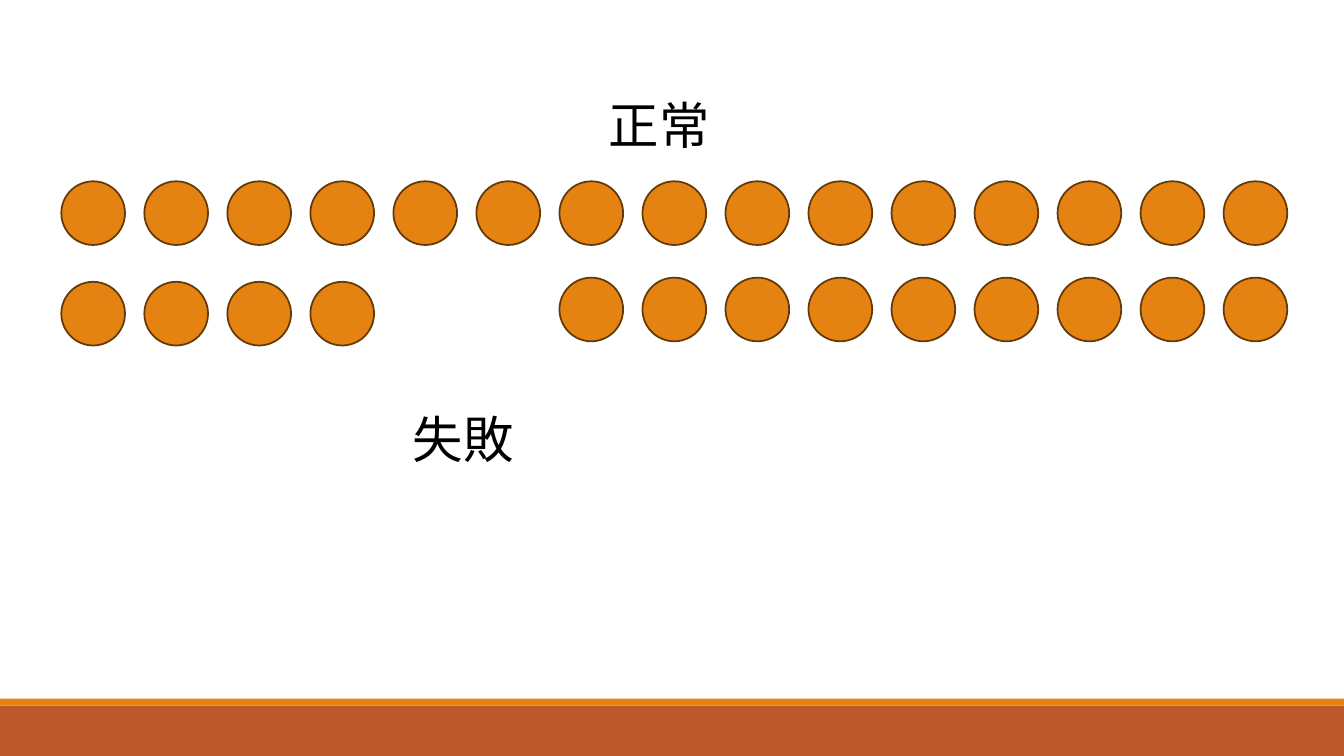
import pptx
import pptx.util
import pptx.dml.color
import pptx.enum.shapes
import pptx.enum.text
import pptx.oxml
import pptx.oxml.ns

Pt = pptx.util.Pt
SHAPES = pptx.enum.shapes.MSO_SHAPE
SLIDE_WIDTH, SLIDE_HEIGHT = 960, 540
FONT = "Noto Sans CJK SC"
COLORS = {
    "band": "BD582C",
    "accent": "E48312",
    "outline": "643908",
    "text": "000000",
}
DOT_SIZE = 45.5
DOT_PITCH = 59.3
DOTS_LEFT = 43.8


def rgb(name):
    return pptx.dml.color.RGBColor.from_string(COLORS[name])


def add_filled(slide, kind, left, top, width, height, color):
    shape = slide.shapes.add_shape(kind, Pt(left), Pt(top), Pt(width), Pt(height))
    shape.shadow.inherit = False
    shape.fill.solid()
    shape.fill.fore_color.rgb = rgb(color)
    shape.line.fill.background()
    return shape


def add_footer(slide, top, width, height, stripe_height):
    """Draw the bottom band with a thin stripe resting on it."""
    add_filled(slide, SHAPES.RECTANGLE, 0, top, width, height, "band")
    add_filled(slide, SHAPES.RECTANGLE, 0, top - stripe_height, width, stripe_height, "accent")


def add_dots(slide, left, top, columns):
    """Draw a row of dots in the given columns of the grid."""
    for column in columns:
        dot = add_filled(slide, SHAPES.OVAL, left + column * DOT_PITCH, top,
                         DOT_SIZE, DOT_SIZE, "accent")
        dot.line.color.rgb = rgb("outline")
        dot.line.width = Pt(1.25)


def add_label(slide, text, left, top, width, height):
    label = slide.shapes.add_textbox(Pt(left), Pt(top), Pt(width), Pt(height))
    frame = label.text_frame
    frame.word_wrap = True
    frame.auto_size = pptx.enum.text.MSO_AUTO_SIZE.SHAPE_TO_FIT_TEXT
    frame.text = text
    paragraph = frame.paragraphs[0]
    paragraph.alignment = pptx.enum.text.PP_ALIGN.CENTER
    font = paragraph.runs[0].font
    font.size = Pt(36)
    font.color.rgb = rgb("text")
    font.name = FONT
    east_asian = pptx.oxml.parse_xml(
        f'<a:ea {pptx.oxml.ns.nsdecls("a")} typeface="{FONT}"/>')
    paragraph.runs[0].font._element.find(pptx.oxml.ns.qn("a:latin")).addnext(east_asian)


def main():
    presentation = pptx.Presentation()
    presentation.slide_width = Pt(SLIDE_WIDTH)
    presentation.slide_height = Pt(SLIDE_HEIGHT)
    slide = presentation.slides.add_slide(presentation.slide_layouts[6])

    add_footer(slide, 504, SLIDE_WIDTH, 36, 5)
    add_dots(slide, DOTS_LEFT, 129.5, range(15))
    add_dots(slide, DOTS_LEFT, 201.3, range(4))
    add_dots(slide, DOTS_LEFT, 198.3, range(6, 15))
    add_label(slide, "失敗", 208, 288, 246, 51)
    add_label(slide, "正常", 348, 63.5, 246, 51)

    presentation.save("out.pptx")


if __name__ == "__main__":
    main()
